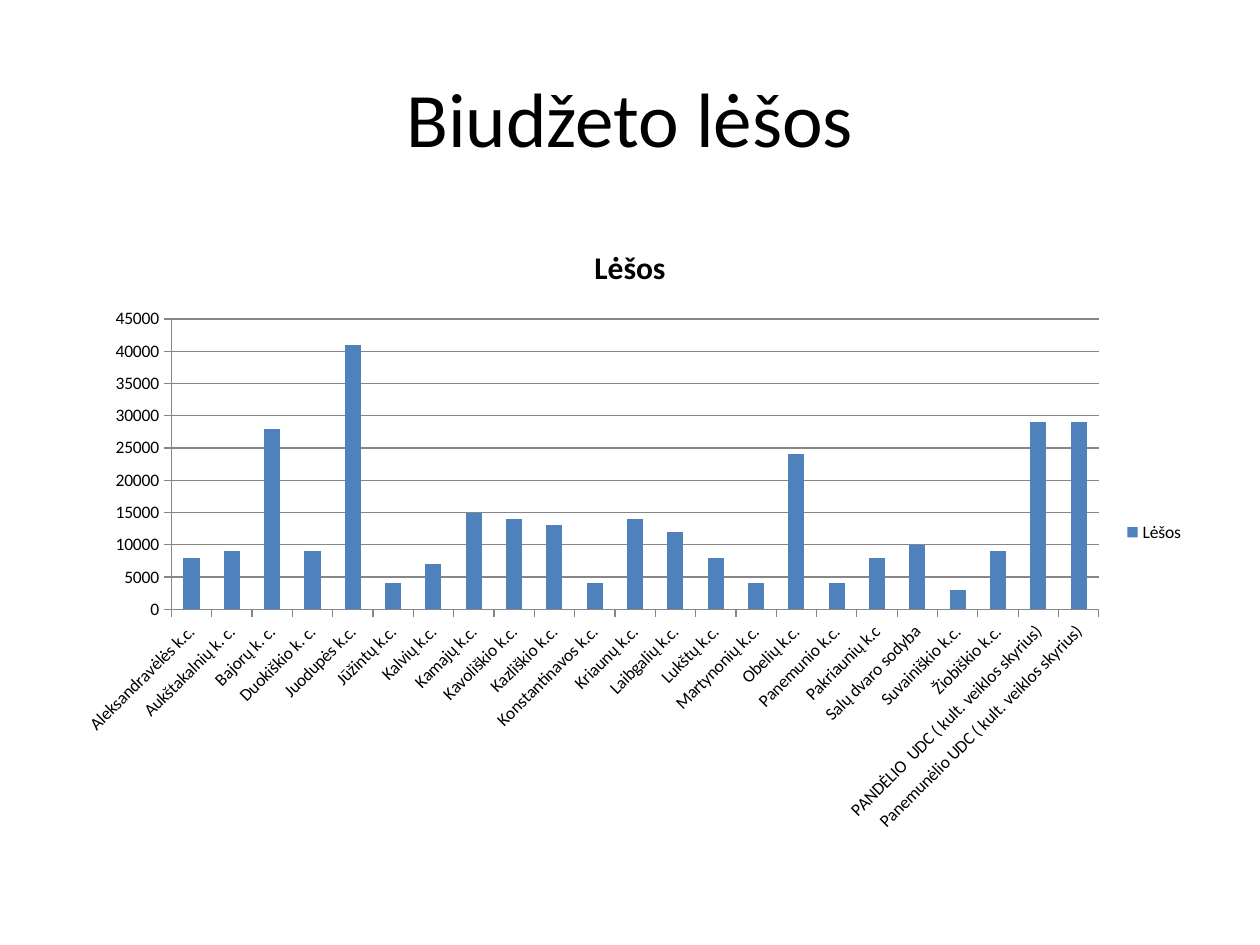
from typing import NamedTuple

from pptx import Presentation
from pptx.chart.data import CategoryChartData
from pptx.dml.color import RGBColor
from pptx.enum.chart import XL_CHART_TYPE, XL_LEGEND_POSITION, XL_TICK_LABEL_POSITION, XL_TICK_MARK
from pptx.enum.text import MSO_ANCHOR, PP_ALIGN
from pptx.util import Pt

FONT = "Calibri"
BLACK = "000000"
GREY = "868686"
BLUE = "4F81BD"


class Centre(NamedTuple):
    name: str
    funds: int


CENTRES = [
    Centre("Aleksandravėlės k.c.", 8000),
    Centre("Aukštakalnių k. c.", 9000),
    Centre("Bajorų k. c.", 28000),
    Centre("Duokiškio k. c.", 9000),
    Centre("Juodupės k.c.", 41000),
    Centre("Jūžintų k.c.", 4000),
    Centre("Kalvių k.c.", 7000),
    Centre("Kamajų k.c.", 15000),
    Centre("Kavoliškio k.c.", 14000),
    Centre("Kazliškio k.c.", 13000),
    Centre("Konstantinavos k.c.", 4000),
    Centre("Kriaunų k.c.", 14000),
    Centre("Laibgalių k.c.", 12000),
    Centre("Lukštų k.c.", 8000),
    Centre("Martynonių k.c.", 4000),
    Centre("Obelių k.c.", 24000),
    Centre("Panemunio k.c.", 4000),
    Centre("Pakriaunių k.c", 8000),
    Centre("Salų dvaro sodyba", 10000),
    Centre("Suvainiškio k.c.", 3000),
    Centre("Žiobiškio k.c.", 9000),
    Centre("PANDĖLIO  UDC ( kult. veiklos skyrius)", 29000),
    Centre("Panemunėlio UDC ( kult. veiklos skyrius)", 29000),
]


def rgb(value: str) -> RGBColor:
    return RGBColor.from_string(value)


def style_font(font, size: float, bold: bool = False) -> None:
    font.name = FONT
    font.size = Pt(size)
    font.bold = bold
    font.color.rgb = rgb(BLACK)


def style_line(line) -> None:
    line.color.rgb = rgb(GREY)
    line.width = Pt(0.75)


def add_title(s, text: str) -> None:
    sp = s.shapes.add_textbox(Pt(36), Pt(21.6), Pt(648), Pt(90))
    tf = sp.text_frame
    tf.word_wrap = True
    tf.vertical_anchor = MSO_ANCHOR.MIDDLE
    tf.text = text
    p = tf.paragraphs[0]
    p.alignment = PP_ALIGN.CENTER
    style_font(p.runs[0].font, 44)


def add_funds_chart(s, name: str, centres: list[Centre]) -> None:
    data = CategoryChartData(number_format="General")
    data.categories = [c.name for c in centres]
    data.add_series(name, [c.funds for c in centres])
    chart = s.shapes.add_chart(
        XL_CHART_TYPE.COLUMN_CLUSTERED, Pt(36), Pt(126), Pt(648), Pt(356.4), data
    ).chart
    style_font(chart.font, 10)

    chart.has_title = True
    tf = chart.chart_title.text_frame
    tf.text = name
    style_font(tf.paragraphs[0].runs[0].font, 18, bold=True)

    chart.has_legend = True
    chart.legend.position = XL_LEGEND_POSITION.RIGHT
    chart.legend.include_in_layout = False

    for axis in (chart.category_axis, chart.value_axis):
        axis.major_tick_mark = XL_TICK_MARK.OUTSIDE
        axis.minor_tick_mark = XL_TICK_MARK.NONE
        axis.tick_label_position = XL_TICK_LABEL_POSITION.NEXT_TO_AXIS
        style_line(axis.format.line)

    funds_axis = chart.value_axis
    funds_axis.minimum_scale = 0
    funds_axis.maximum_scale = 45000
    funds_axis.major_unit = 5000
    funds_axis.has_major_gridlines = True
    style_line(funds_axis.major_gridlines.format.line)

    plot = chart.plots[0]
    plot.gap_width = 150
    plot.vary_by_categories = False
    fill = plot.series[0].format.fill
    fill.solid()
    fill.fore_color.rgb = rgb(BLUE)


def main() -> None:
    prs = Presentation()
    prs.slide_width, prs.slide_height = Pt(720), Pt(540)
    s = prs.slides.add_slide(prs.slide_layouts[6])
    add_title(s, "Biudžeto lėšos")
    add_funds_chart(s, "Lėšos", CENTRES)
    prs.save("out.pptx")


if __name__ == "__main__":
    main()
